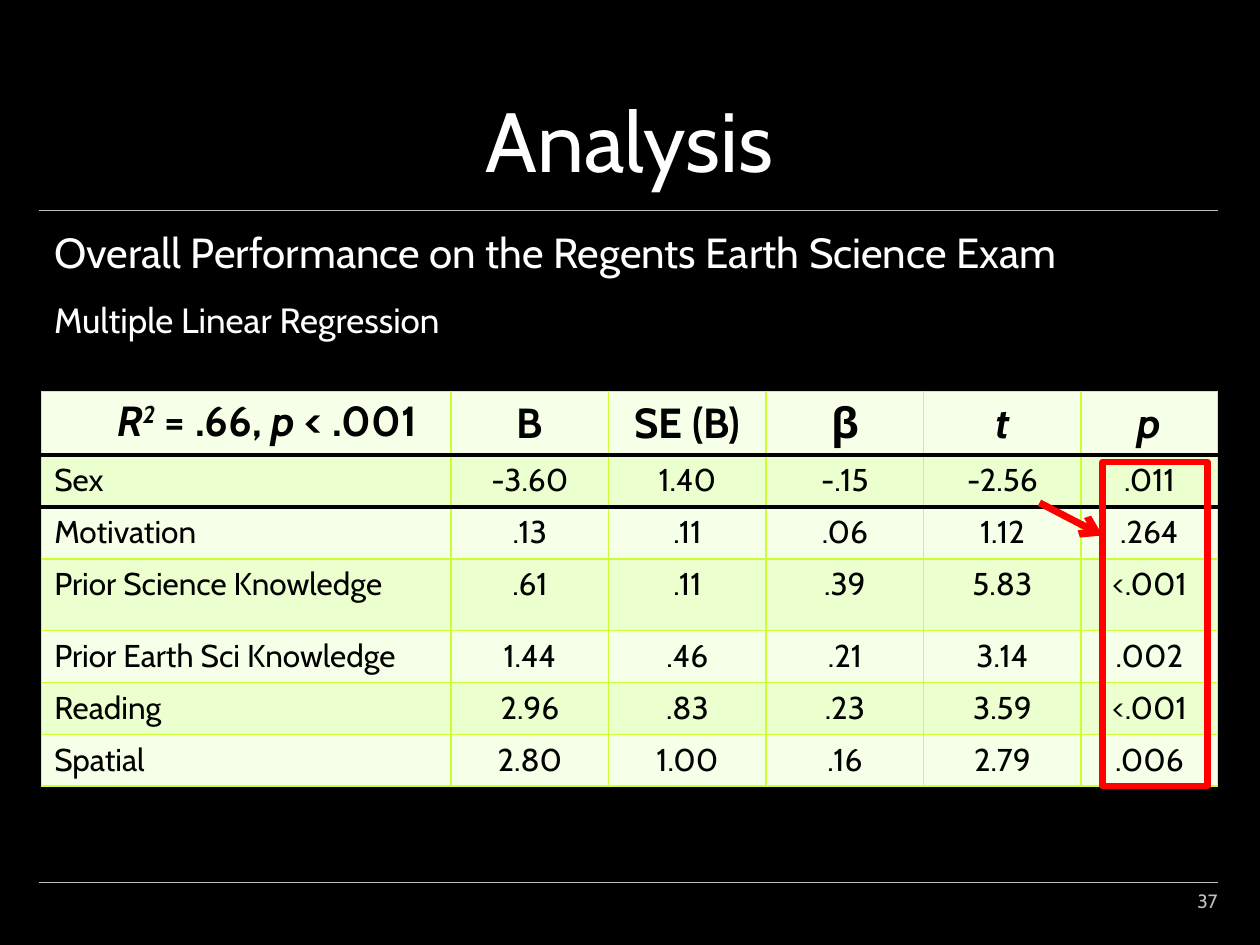
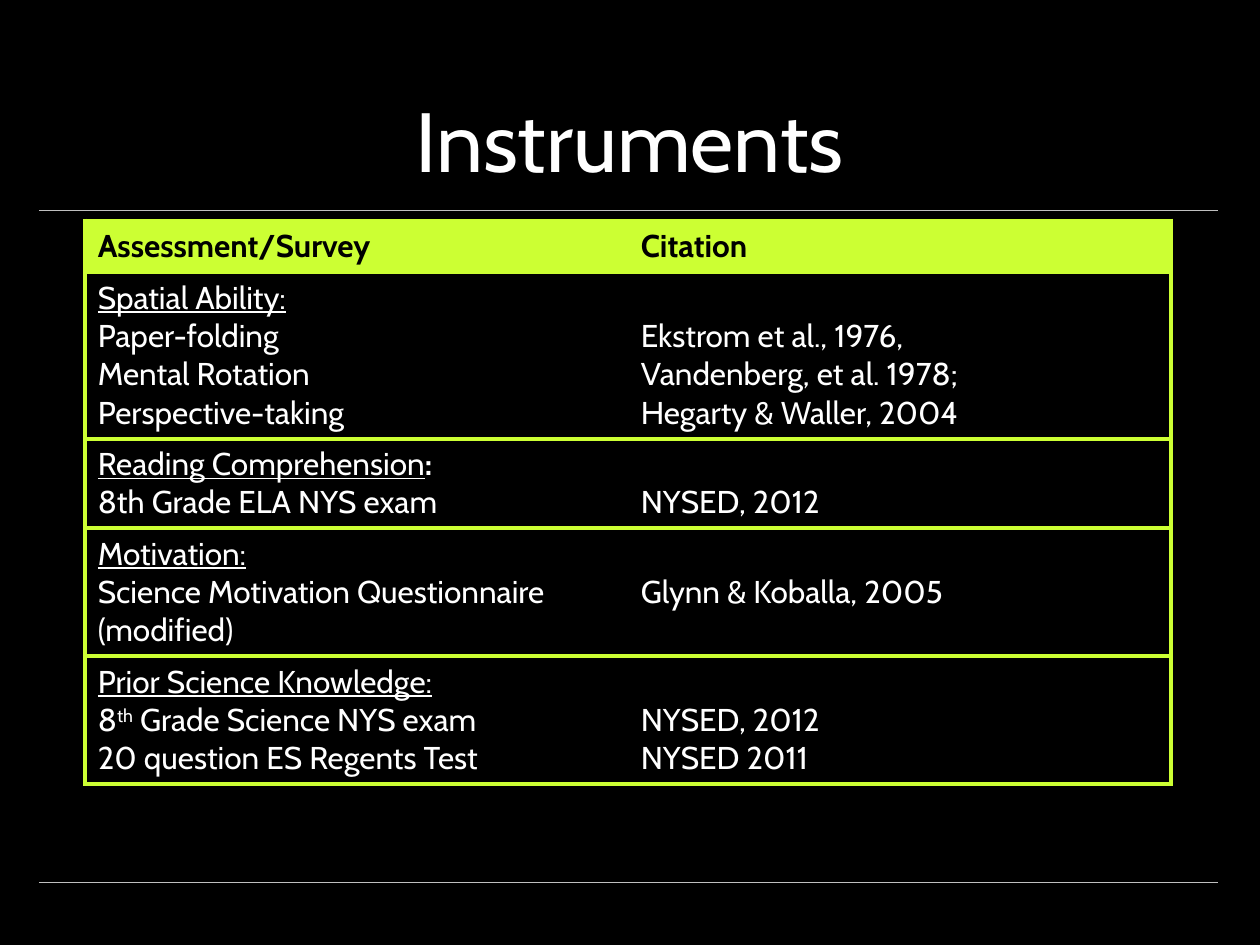
import pptx
import pptx.dml.color
import pptx.enum.shapes
import pptx.enum.text
import pptx.oxml
import pptx.oxml.ns
import pptx.util

Pt = pptx.util.Pt
qn = pptx.oxml.ns.qn
ALIGN = pptx.enum.text.PP_ALIGN
ANCHOR = pptx.enum.text.MSO_ANCHOR

# Shared palette, font and measures
BLACK, WHITE, GREY = "000000", "FFFFFF", "BFBFBF"
LIME, LIGHT_LIME, PALE_LIME, RED = "CCFF33", "ECFFCE", "F6FFE8", "FF0000"
FONT = "Cabin"
RULE_LEFT, RULE_RIGHT, RULE_TOPS = 22.3, 696.2, (120.2, 504)
CELL_MARGIN = 3.6
LINE_18 = 21.9  # height of one line of 18 point text
NO_GRID_STYLE = "{2D5ABB26-0587-4C30-8999-92F81FD0307C}"


def rgb(value):
    return pptx.dml.color.RGBColor.from_string(value)


def points(*values):
    return [Pt(value) for value in values]


class DeckBuilder:
    """Holds the deck style and the page being filled."""

    def __init__(self):
        self.deck = pptx.Presentation()
        self.deck.slide_width, self.deck.slide_height = points(720, 540)
        fill = self.deck.slide_master.background.fill
        fill.solid()
        fill.fore_color.rgb = rgb(BLACK)
        self.page = None

    def start_page(self, title):
        self.page = self.deck.slides.add_slide(self.deck.slide_layouts[5])
        for top in RULE_TOPS:
            self.line(RULE_LEFT, top, RULE_RIGHT, top, GREY, 0.25)
        box = self.page.shapes.title
        box.left, box.top, box.width, box.height = points(50.4, 8.6, 618.5, 103)
        self.set_text(box.text_frame, [title], size=48, color=WHITE,
                      align=ALIGN.CENTER, anchor=ANCHOR.BOTTOM)

    def set_text(self, frame, paragraphs, size, color, align=ALIGN.LEFT,
                 anchor=ANCHOR.TOP, **style):
        """Each paragraph is a string or a list of (text, format) spans."""
        frame.vertical_anchor = anchor
        frame.auto_size = pptx.enum.text.MSO_AUTO_SIZE.NONE
        frame.word_wrap = True
        for index, spans in enumerate(paragraphs):
            para = frame.add_paragraph() if index else frame.paragraphs[0]
            para.alignment = align
            if isinstance(spans, str):
                spans = [(spans, {})]
            for text, changes in spans:
                span = para.add_run()
                span.text = text
                look = {"name": FONT, "size": size, "bold": False, **style, **changes}
                look["size"] = Pt(look["size"])
                raised = look.pop("raised", False)
                for name, value in look.items():
                    setattr(span.font, name, value)
                span.font.color.rgb = rgb(color)
                if raised:
                    span.font._element.set("baseline", "30000")

    def text(self, left, top, width, height, paragraphs, **style):
        box = self.page.shapes.add_textbox(*points(left, top, width, height))
        self.set_text(box.text_frame, paragraphs, **style)
        return box.text_frame

    def line(self, x1, y1, x2, y2, color, width, arrow=False):
        line = self.page.shapes.add_connector(
            pptx.enum.shapes.MSO_CONNECTOR.STRAIGHT, *points(x1, y1, x2, y2))
        line.line.color.rgb = rgb(color)
        line.line.width = Pt(width)
        if arrow:
            namespace = pptx.oxml.ns.nsdecls("a")
            line.line._get_or_add_ln().append(
                pptx.oxml.parse_xml(f'<a:tailEnd {namespace} type="arrow"/>'))
        properties = line._element.spPr
        properties.append(properties.makeelement(qn("a:effectLst"), {}))

    def frame(self, left, top, width, height, color, weight):
        box = self.page.shapes.add_shape(pptx.enum.shapes.MSO_SHAPE.RECTANGLE,
                                         *points(left, top, width, height))
        box.shadow.inherit = False
        box.fill.background()
        box.line.color.rgb = rgb(color)
        box.line.width = Pt(weight)

    def table(self, left, top, widths, heights):
        holder = self.page.shapes.add_table(
            len(heights), len(widths), *points(left, top, sum(widths), sum(heights)))
        table = holder.table
        table.first_row = table.horz_banding = False
        table._tbl.tblPr.find(qn("a:tableStyleId")).text = NO_GRID_STYLE
        for column, width in zip(table.columns, widths):
            column.width = Pt(width)
        for row, height in zip(table.rows, heights):
            row.height = Pt(height)
        return table

    def cell(self, cell, paragraphs, borders, fill=None, top=CELL_MARGIN, **style):
        """Borders map a side (L, R, T, B) to a colour and a width."""
        properties = cell._tc.get_or_add_tcPr()
        for side in "LRTB":
            if side in borders:
                color, width = borders[side]
                properties.append(pptx.oxml.parse_xml(
                    f'<a:ln{side} {pptx.oxml.ns.nsdecls("a")} w="{Pt(width)}">'
                    f'<a:solidFill><a:srgbClr val="{color}"/></a:solidFill></a:ln{side}>'))
        if fill:
            cell.fill.solid()
            cell.fill.fore_color.rgb = rgb(fill)
        else:
            cell.fill.background()
        cell.margin_top, cell.margin_bottom = points(top, CELL_MARGIN)
        self.set_text(cell.text_frame, paragraphs, **style)


REGRESSION = [
    ["", "B", "SE (B)", "β", "t", "p"],
    ["Sex", "-3.60", "1.40", "-.15", "-2.56", ".011"],
    ["Motivation", ".13", ".11", ".06", "1.12", ".264"],
    ["Prior Science Knowledge", ".61", ".11", ".39", "5.83", "<.001"],
    ["Prior Earth Sci Knowledge", "1.44", ".46", ".21", "3.14", ".002"],
    ["Reading", "2.96", ".83", ".23", "3.59", "<.001"],
    ["Spatial", "2.80", "1.00", ".16", "2.79", ".006"],
]

# Heading spans, items under the heading, citations
INSTRUMENTS = [
    ([("Spatial Ability:", {"underline": True})],
     ["Paper-folding", "Mental Rotation", "Perspective-taking"],
     ["Ekstrom et al., 1976,", "Vandenberg, et al. 1978;", "Hegarty & Waller, 2004"]),
    ([("Reading Comprehension", {"underline": True}), (":", {"bold": True})],
     ["8th Grade ELA NYS exam"], ["NYSED, 2012"]),
    ([("Motivation:", {"underline": True})],
     ["Science Motivation Questionnaire (modified)"], ["Glynn & Koballa, 2005"]),
    ([("Prior Science Knowledge:", {"underline": True})],
     [[("8", {}), ("th", {"raised": True}), (" Grade Science NYS exam", {})],
      "20 question ES Regents Test"],
     ["NYSED, 2012", "NYSED 2011"]),
]


def analysis_page(builder):
    builder.start_page("Analysis")
    number = builder.text(635.8, 500.4, 60, 28.8, ["37"], size=11, color=GREY,
                          align=ALIGN.RIGHT, anchor=ANCHOR.MIDDLE)
    number.margin_left = number.margin_right = 0
    intro = builder.text(23.8, 126, 612, 72.7, [
        "Overall Performance on the Regents Earth Science Exam",
        [("Multiple Linear Regression", {"size": 20})]], size=24, color=WHITE)
    intro.paragraphs[1].space_before = Pt(12)

    # Regression table: black rules above and below the first data row
    heights = [36] + [29.65] * 6
    heights[3] = 41
    table = builder.table(23.8, 223.7, [234] + [90] * 4 + [78], heights)
    thin, thick = (LIME, 1), (BLACK, 2.25)
    for row, values in enumerate(REGRESSION):
        borders = {"L": thin, "R": thin,
                   "T": thick if row in (1, 2) else thin,
                   "B": thick if row in (0, 1) else thin}
        for column, value in enumerate(values):
            builder.cell(table.cell(row, column), [value] if value else [], borders,
                         fill=LIGHT_LIME if row % 2 else PALE_LIME,
                         size=18 if row else 24, color=BLACK, bold=row == 0,
                         italic=row == 0 and column > 3,
                         align=ALIGN.CENTER if column else ALIGN.LEFT)

    # Model fit, and the highlighted p values
    italic = {"italic": True}
    builder.text(59.8, 221.8, 190, 65.5, [[
        ("R", italic), ("2", {"italic": True, "raised": True}), (" = .66, ", {}),
        ("p ", italic), ("< .001", {})]], size=24, color=BLACK, bold=True)
    builder.frame(630, 264, 60, 185, RED, 3.5)
    builder.line(594, 287.3, 630, 306, RED, 4, arrow=True)


def instruments_page(builder):
    builder.start_page("Instruments")
    heights = [29.65, 95, 51, 73, 73]
    table = builder.table(48.7, 126, [310.3] * 2, heights)
    edge = (LIME, 2.5)
    sides = [{"L": edge, "T": edge, "B": edge}, {"R": edge, "T": edge, "B": edge}]
    for column, heading in enumerate(["Assessment/Survey", "Citation"]):
        builder.cell(table.cell(0, column), [heading], sides[column], fill=LIME,
                     size=18, color=BLACK, bold=True)
    for row, (heading, items, citations) in enumerate(INSTRUMENTS, 1):
        builder.cell(table.cell(row, 0), [heading, *items], sides[0],
                     size=18, color=WHITE)
        # Citations start level with the first item under the heading
        builder.cell(table.cell(row, 1), citations, sides[1],
                     top=CELL_MARGIN + LINE_18, size=18, color=WHITE)


def main():
    builder = DeckBuilder()
    analysis_page(builder)
    instruments_page(builder)
    builder.deck.save("out.pptx")


if __name__ == "__main__":
    main()
